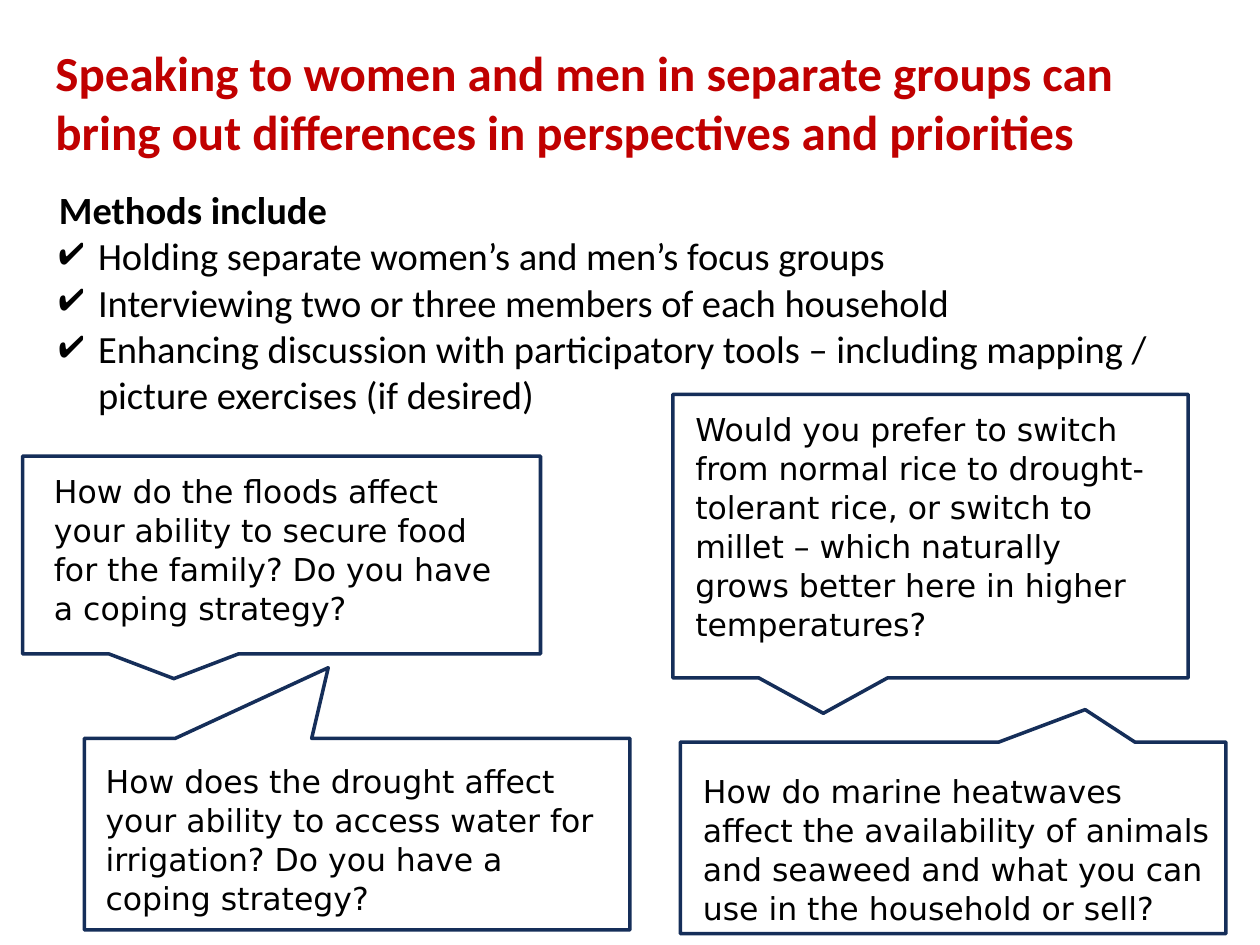
"""Build a slide on speaking to women and men in separate groups."""
from lxml import etree
from pptx import Presentation
from pptx.dml.color import RGBColor
from pptx.enum import shapes, text
from pptx.oxml import ns
from pptx.util import Inches, Pt

RED = RGBColor(0xC0, 0x00, 0x00)
BLACK = RGBColor(0x00, 0x00, 0x00)
NAVY = RGBColor(0x15, 0x2E, 0x59)

TITLE = ("Speaking to women and men in separate groups can bring out "
         "differences in perspectives and priorities")
METHODS = [
    "Holding separate women’s and men’s focus groups",
    "Interviewing two or three members of each household",
    "Enhancing discussion with participatory tools – including mapping / "
    "picture exercises (if desired)",
]
QUESTIONS = [
    ("How do the floods affect your ability to secure food for the family? "
     "Do you have a coping strategy?",
     (0.18, 3.62, 4.11, 1.57), (-0.208, 0.625), (0.33, 3.69, 3.86, 1.31)),
    ("How does the drought affect your ability to access water for "
     "irrigation? Do you have a coping strategy?",
     (0.67, 5.86, 4.33, 1.52), (-0.053, -0.869), (0.74, 5.99, 4.17, 1.31)),
    ("Would you prefer to switch from normal rice to drought-tolerant rice, "
     "or switch to millet – which naturally grows better here in higher "
     "temperatures?",
     (5.34, 3.13, 4.09, 2.25), (-0.208, 0.625), (5.42, 3.2, 3.86, 1.92)),
    ("How do marine heatwaves affect the availability of animals and seaweed "
     "and what you can use in the household or sell?",
     (5.4, 5.89, 4.33, 1.52), (0.242, -0.67), (5.48, 6.07, 4.25, 1.31)),
]


def add_text_box(s, box, inset=True):
    """Add a wrapping, top-anchored text box and return its text frame."""
    tf = s.shapes.add_textbox(*map(Inches, box)).text_frame
    tf.word_wrap = True
    tf.vertical_anchor = text.MSO_ANCHOR.TOP
    if not inset:
        tf.margin_left = tf.margin_right = tf.margin_top = tf.margin_bottom = 0
    return tf


def write(p, words, size, font="Calibri", color=BLACK, bold=False, spacing=None):
    """Write one formatted run into a paragraph."""
    p.line_spacing = spacing
    r = p.add_run()
    r.text = words
    r.font.size, r.font.name, r.font.bold = Pt(size), font, bold
    r.font.color.rgb = color


def add_tick(p):
    """Give a paragraph a hanging tick bullet."""
    pPr = p._p.get_or_add_pPr()
    indent = Inches(0.31)
    pPr.set("marL", str(indent))
    pPr.set("indent", str(-indent))
    clr = etree.SubElement(pPr, ns.qn("a:buClr"))
    etree.SubElement(clr, ns.qn("a:srgbClr"), val=str(BLACK))
    etree.SubElement(pPr, ns.qn("a:buChar"), char="✔")


def add_callout(s, box, tip):
    """Add an outlined speech bubble whose tail ends at tip."""
    sp = s.shapes.add_shape(shapes.MSO_SHAPE.RECTANGULAR_CALLOUT, *map(Inches, box))
    sp.shadow.inherit = False
    sp.fill.background()
    sp.line.color.rgb = NAVY
    sp.line.width = Pt(2)
    sp.adjustments[0], sp.adjustments[1] = tip


def main():
    """Build and save the slide."""
    prs = Presentation()
    prs.slide_width, prs.slide_height = Inches(10), Inches(7.5)
    s = prs.slides.add_slide(prs.slide_layouts[6])

    tf = add_text_box(s, (0.44, 0.34, 8.55, 1.09), inset=False)
    write(tf.paragraphs[0], TITLE, 28, color=RED, bold=True)

    tf = add_text_box(s, (0.37, 1.43, 9.47, 2.26))
    write(tf.paragraphs[0], "Methods include", 22, bold=True)
    for method in METHODS:
        p = tf.add_paragraph()
        write(p, method, 22)
        add_tick(p)

    for question, bubble, tip, box in QUESTIONS:
        add_callout(s, bubble, tip)
        tf = add_text_box(s, box)
        write(tf.paragraphs[0], question, 18, font="DejaVu Sans", spacing=1.03)

    prs.save("out.pptx")


if __name__ == "__main__":
    main()
